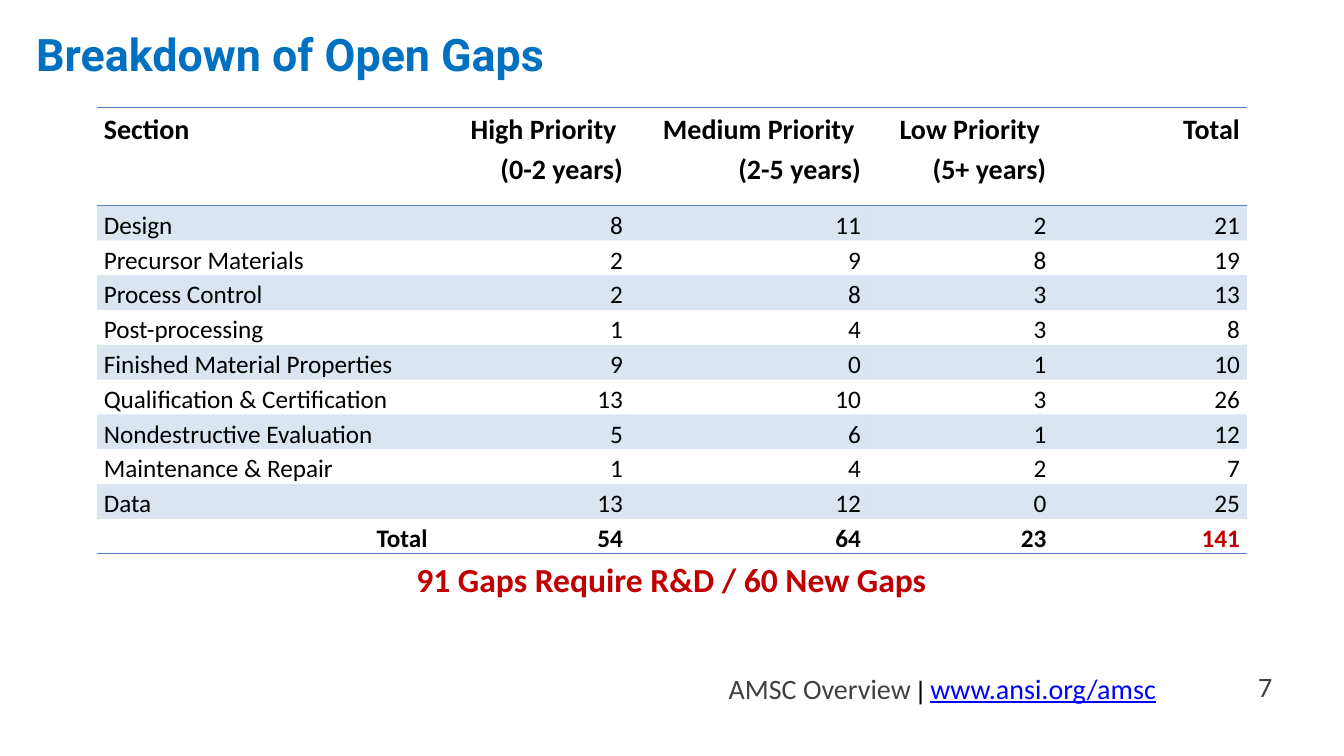
from pptx import Presentation
from pptx.dml.color import RGBColor as RGB
from pptx.enum.text import MSO_ANCHOR as Anchor, PP_ALIGN as Align
from pptx.oxml.ns import qn
from pptx.util import Inches, Pt
from lxml.etree import SubElement as Sub

WIDE, HIGH = Inches(13.333), Inches(7.5)
TITLE = RGB(0x00, 0x70, 0xC0)
RED = RGB(0xC0, 0x00, 0x00)
BLACK = RGB(0x00, 0x00, 0x00)
GREY = RGB(0x40, 0x40, 0x40)
LINK = RGB(0x00, 0x00, 0xFF)
BAND = RGB(0x4F, 0x81, 0xBD)
PLAIN = "{2D5ABB26-0587-4C30-8999-92F81FD0307C}"  # table style without grid

COLS = [25.13, 14.55, 17.7, 13.8, 14.4]
HEADS = ["Section", "High Priority \n(0-2 years)", "Medium Priority \n(2-5 years)",
         "Low Priority \n(5+ years)", "Total"]
GAPS = {
    "Design": (8, 11, 2),
    "Precursor Materials": (2, 9, 8),
    "Process Control": (2, 8, 3),
    "Post-processing": (1, 4, 3),
    "Finished Material Properties": (9, 0, 1),
    "Qualification & Certification": (13, 10, 3),
    "Nondestructive Evaluation": (5, 6, 1),
    "Maintenance & Repair": (1, 4, 2),
    "Data": (13, 12, 0),
}


def across(share):
    """Turn a percentage of the slide's width into a length."""
    return int(WIDE * share / 100)


def down(share):
    """Turn a percentage of the slide's height into a length."""
    return int(HIGH * share / 100)


def style(font, size, color, bold=False, name="Calibri"):
    font.name, font.size, font.bold = name, Pt(size), bold
    font.color.rgb = color


def add_box(slide, left, top, width, height, anchor=Anchor.TOP, align=Align.LEFT):
    """Add a text box placed in percentages and return its first paragraph."""
    box = slide.shapes.add_textbox(across(left), down(top), across(width), down(height))
    frame = box.text_frame
    frame.word_wrap = True
    frame.vertical_anchor = anchor
    para = frame.paragraphs[0]
    para.alignment = align
    return para


def add_label(para, text, *look):
    para.text = text
    style(para.font, *look)


def add_footer(slide):
    para = add_box(slide, 53.48, 88.13, 36.53, 5.87)
    parts = [("AMSC Overview ", 20, GREY, "Calibri"), ("|", 18, BLACK, "Arial"),
             (" ", 20, GREY, "Calibri"), ("www.ansi.org/amsc", 20, LINK, "Calibri")]
    for text, size, color, name in parts:
        run = para.add_run()
        run.text = text
        style(run.font, size, color, name=name)
        run.font.underline = color == LINK


def rule(cell, *sides):
    """Draw a thin line on the given sides of a cell, in the order top, bottom."""
    props = cell._tc.get_or_add_tcPr()
    for spot, side in enumerate(sides):
        line = Sub(props, qn("a:" + side), w=str(Pt(1)))
        fill = Sub(line, qn("a:solidFill"))
        Sub(fill, qn("a:srgbClr"), val=str(BAND))
        props.insert(spot, line)


def tint(cell):
    cell.fill.solid()
    cell.fill.fore_color.rgb = BAND
    color = cell._tc.tcPr.find(".//" + qn("a:srgbClr"))
    Sub(color, qn("a:alpha"), val="20000")


def fill_cell(cell, text, size, color, bold, align):
    cell.margin_left = cell.margin_right = Inches(0.07)
    cell.margin_top = cell.margin_bottom = 0
    cell.text = text
    for para in cell.text_frame.paragraphs:
        para.alignment = align
        para.line_spacing = 1.15
        style(para.font, size, color, bold)


def add_gaps(slide):
    body = [[name, *nums, sum(nums)] for name, nums in GAPS.items()]
    sums = [sum(col) for col in list(zip(*body))[1:]]
    rows = [HEADS, *body, ["Total", *sums]]
    last = len(rows) - 1
    heights = [12.93] + [4.27] * last

    frame = slide.shapes.add_table(len(rows), len(COLS), across(7.2), down(14.27),
                                   across(sum(COLS)), down(sum(heights)))
    table = frame.table
    table.horz_banding = False
    table._tbl.tblPr.find(qn("a:tableStyleId")).text = PLAIN
    for col, share in zip(table.columns, COLS):
        col.width = across(share)
    for row, share in zip(table.rows, heights):
        row.height = down(share)

    for r, row in enumerate(rows):
        for c, value in enumerate(row):
            cell = table.cell(r, c)
            align = Align.LEFT if c == 0 and r < last else Align.RIGHT
            color = RED if r == last and c == len(COLS) - 1 else BLACK
            fill_cell(cell, str(value), 18 if r else 20, color, r in (0, last), align)
            if r % 2:
                tint(cell)
            else:
                cell.fill.background()
            if r == 0:
                rule(cell, "lnT", "lnB")
            elif r == last:
                rule(cell, "lnB")


def main():
    deck = Presentation()
    deck.slide_width, deck.slide_height = WIDE, HIGH
    slide = deck.slides.add_slide(deck.slide_layouts[6])
    add_footer(slide)
    page = add_box(slide, 90.9, 88.13, 4.5, 5.33, Anchor.MIDDLE, Align.RIGHT)
    add_label(page, "7", 20, GREY)
    add_gaps(slide)
    note = add_box(slide, 7.13, 73.33, 85.65, 6.67, align=Align.CENTER)
    add_label(note, "91 Gaps Require R&D / 60 New Gaps", 24, RED, True)
    title = add_box(slide, 1.95, 0.13, 81.3, 13.87, Anchor.MIDDLE)
    add_label(title, "Breakdown of Open Gaps", 32, TITLE, True, "Roboto")
    deck.save("out.pptx")


if __name__ == "__main__":
    main()
